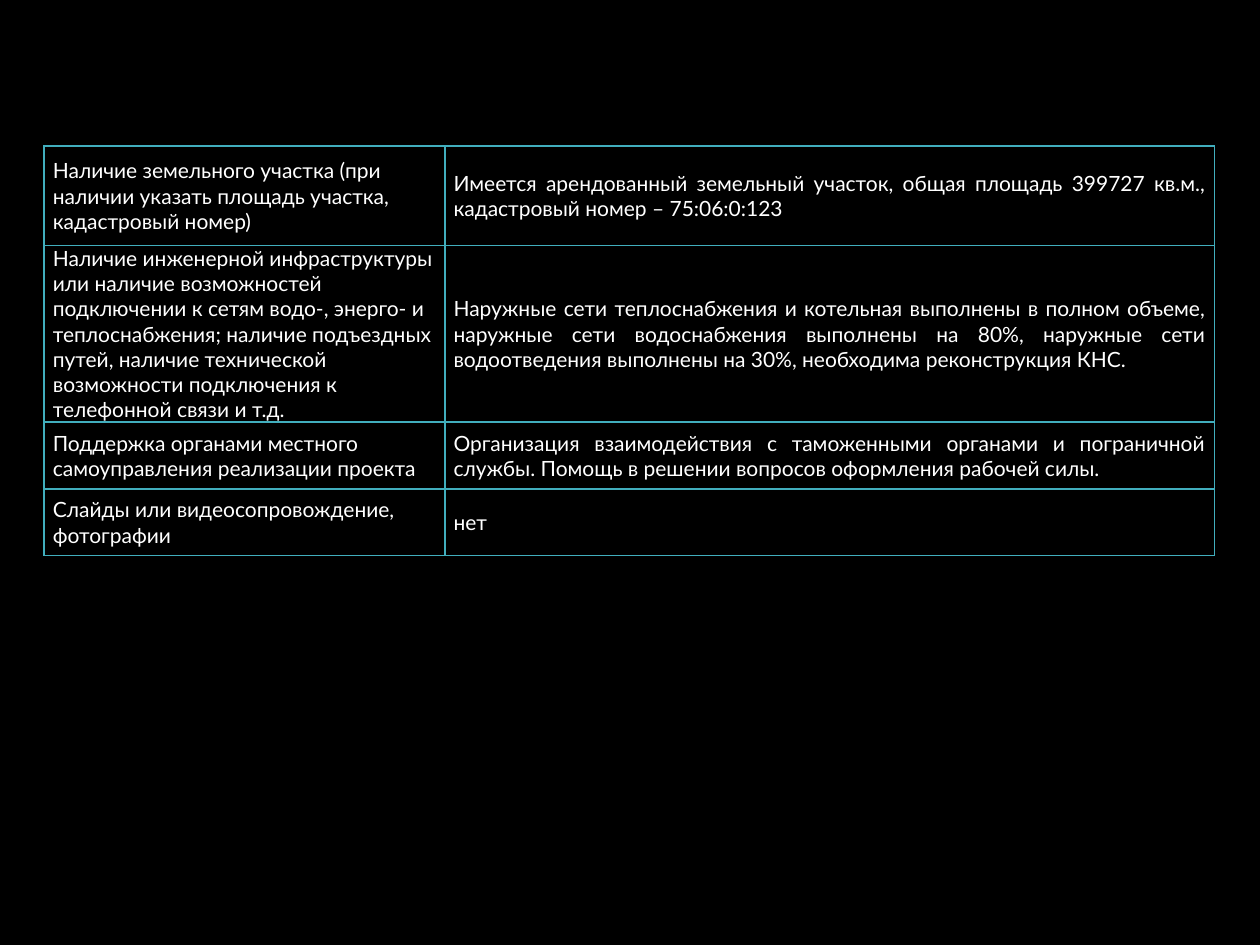
"""Build a slide with the project infrastructure table."""
from lxml import etree
from pptx import Presentation
from pptx import util as u
from pptx.dml.color import RGBColor
from pptx.enum import text
from pptx.oxml import ns

BLACK = RGBColor(0x00, 0x00, 0x00)
WHITE = RGBColor(0xFF, 0xFF, 0xFF)
TEAL = RGBColor(0x41, 0xAE, 0xBD)

COL_WIDTHS = (3.18, 6.11)
ROW_HEIGHTS = (0.79, 1.25, 0.53, 0.53)
ROWS = (
    ("Наличие земельного участка (при наличии указать площадь участка, кадастровый номер)",
     "Имеется арендованный земельный участок, общая площадь 399727 кв.м., "
     "кадастровый номер – 75:06:0:123"),
    ("Наличие инженерной инфраструктуры или наличие возможностей подключении к сетям "
     "водо-, энерго- и теплоснабжения; наличие подъездных путей, наличие технической "
     "возможности подключения к телефонной связи и т.д.",
     "Наружные сети теплоснабжения и котельная выполнены в полном объеме, наружные сети "
     "водоснабжения выполнены на 80%, наружные сети водоотведения выполнены на 30%, "
     "необходима реконструкция КНС."),
    ("Поддержка органами местного самоуправления реализации проекта",
     "Организация взаимодействия с таможенными органами и пограничной службы. "
     "Помощь в решении вопросов оформления рабочей силы."),
    ("Слайды или видеосопровождение, фотографии", "нет"),
)


class SlideBuilder:
    font = "Lato"
    size = u.Pt(12)
    aligns = (text.PP_ALIGN.LEFT, text.PP_ALIGN.JUSTIFY)

    def __init__(self, prs):
        self.s = prs.slides.add_slide(prs.slide_layouts[6])
        fill = self.s.background.fill
        fill.solid()
        fill.fore_color.rgb = BLACK

    def table(self, left, top, widths, heights, rows):
        frame = self.s.shapes.add_table(
            len(rows), len(widths), u.Inches(left), u.Inches(top),
            u.Inches(sum(widths)), u.Inches(sum(heights)))
        table = frame.table
        table.first_row = table.horz_banding = False
        for column, width in zip(table.columns, widths):
            column.width = u.Inches(width)
        for row, height, values in zip(table.rows, heights, rows):
            row.height = u.Inches(height)
            for cell, value, align in zip(row.cells, values, self.aligns):
                self.cell(cell, value, align)

    def cell(self, cell, value, align):
        cell.text_frame.text = value
        cell.vertical_anchor = text.MSO_ANCHOR.MIDDLE
        cell.margin_left = cell.margin_right = u.Inches(0.07)
        cell.margin_top = cell.margin_bottom = 0
        cell.fill.background()
        self.borders(cell)
        p = cell.text_frame.paragraphs[0]
        p.alignment = align
        for r in p.runs:
            r.font.name = self.font
            r.font.size = self.size
            r.font.color.rgb = WHITE

    def borders(self, cell):
        props = cell._tc.get_or_add_tcPr()
        for i, side in enumerate(("lnL", "lnR", "lnT", "lnB")):
            line = etree.Element(ns.qn(f"a:{side}"), w=str(u.Pt(1)))
            fill = etree.SubElement(line, ns.qn("a:solidFill"))
            etree.SubElement(fill, ns.qn("a:srgbClr"), val=str(TEAL))
            props.insert(i, line)


def main():
    prs = Presentation()
    prs.slide_width, prs.slide_height = u.Inches(10), u.Inches(7.5)
    builder = SlideBuilder(prs)
    builder.table(0.35, 1.16, COL_WIDTHS, ROW_HEIGHTS, ROWS)
    prs.save("out.pptx")


if __name__ == "__main__":
    main()
